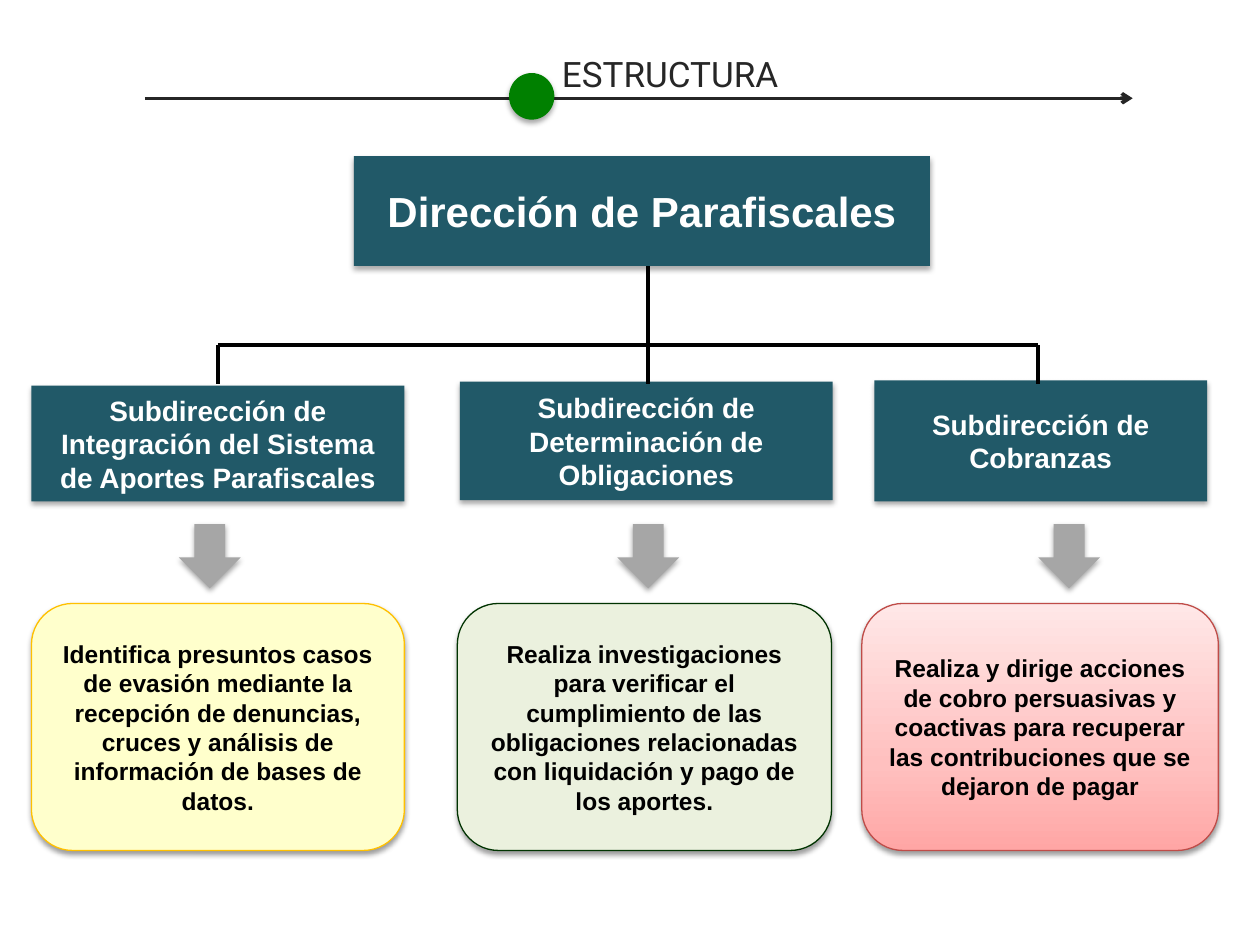
from dataclasses import dataclass
from lxml.etree import SubElement
from pptx import Presentation
from pptx.dml.color import RGBColor
from pptx.enum.shapes import MSO_CONNECTOR as Line, MSO_SHAPE as Shape
from pptx.enum.text import MSO_ANCHOR as Anchor, MSO_AUTO_SIZE as Auto, PP_ALIGN as Align
from pptx.oxml.ns import qn
from pptx.util import Inches, Pt


@dataclass(frozen=True)
class Theme:
    box: str = "215968"
    marker: str = "008000"
    arrow: str = "A6A6A6"
    ink: str = "262626"
    black: str = "000000"
    white: str = "FFFFFF"
    font: str = "Arial"
    title_font: str = "Roboto"
    title: int = 20
    head: int = 24
    unit: int = 16
    body: int = 14
    border: float = 0.75
    axis: float = 2
    link: float = 2.25


class Deck:
    COLS, ROWS = 100, 75

    def __init__(self, theme):
        self.theme = theme
        self.prs = Presentation()
        self.prs.slide_width, self.prs.slide_height = Inches(10), Inches(7.5)
        self.s = self.prs.slides.add_slide(self.prs.slide_layouts[5])

    def x(self, cols):
        return round(self.prs.slide_width * cols / self.COLS)

    def y(self, rows):
        return round(self.prs.slide_height * rows / self.ROWS)

    def area(self, left, top, width, height):
        return self.x(left), self.y(top), self.x(width), self.y(height)

    def text(self, tf, text, size, color, font, bold=False, align=Align.CENTER, anchor=Anchor.MIDDLE):
        frame = {"word_wrap": True, "auto_size": Auto.NONE, "vertical_anchor": anchor}
        for name, value in frame.items():
            setattr(tf, name, value)
        p = tf.paragraphs[0]
        p.alignment = align
        r = p.add_run()
        r.text = text
        for name, value in {"size": Pt(size), "name": font, "bold": bold}.items():
            setattr(r.font, name, value)
        r.font.color.rgb = RGBColor.from_string(color)

    def title(self, area, text):
        t = self.theme
        sp = self.s.shapes.title
        for name, value in zip(("left", "top", "width", "height"), self.area(*area)):
            setattr(sp, name, value)
        self.text(sp.text_frame, text, t.title, t.ink, t.title_font, align=Align.LEFT, anchor=Anchor.TOP)

    def gradient(self, sp, stops):
        sp.fill.gradient()
        sp.fill.gradient_angle = 90
        gs_list = sp._element.spPr.find(qn("a:gradFill")).find(qn("a:gsLst"))
        for gs in list(gs_list):
            gs_list.remove(gs)
        for pos, color in stops:
            gs = SubElement(gs_list, qn("a:gs"), pos=str(pos * 1000))
            SubElement(gs, qn("a:srgbClr"), val=color)

    def shadow(self, sp, alpha, dist):
        sp.shadow.inherit = False
        effects = sp._element.spPr.find(qn("a:effectLst"))
        outer = SubElement(effects, qn("a:outerShdw"), blurRad=str(Pt(3.1)), dist=str(Pt(dist)),
                           dir="5400000", rotWithShape="0")
        color = SubElement(outer, qn("a:srgbClr"), val=self.theme.black)
        SubElement(color, qn("a:alpha"), val=str(alpha * 1000))

    def shape(self, kind, area, fill, line=None):
        sp = self.s.shapes.add_shape(kind, *self.area(*area))
        if isinstance(fill, str):
            sp.fill.solid()
            sp.fill.fore_color.rgb = RGBColor.from_string(fill)
        else:
            self.gradient(sp, fill)
        if line:
            sp.line.color.rgb = RGBColor.from_string(line)
            sp.line.width = Pt(self.theme.border)
            self.shadow(sp, 38, 1.6)
        else:
            sp.line.fill.background()
            self.shadow(sp, 35, 1.8)
        return sp

    def box(self, area, text, size):
        t = self.theme
        sp = self.shape(Shape.RECTANGLE, area, t.box)
        self.text(sp.text_frame, text, size, t.white, t.font, bold=True)

    def card(self, area, text, fill, line):
        t = self.theme
        sp = self.shape(Shape.ROUNDED_RECTANGLE, area, fill, line)
        self.text(sp.text_frame, text, t.body, t.black, t.font, bold=True)

    def line(self, x1, y1, x2, y2, color, width, arrow=False):
        c = self.s.shapes.add_connector(Line.STRAIGHT, self.x(x1), self.y(y1), self.x(x2), self.y(y2))
        c.line.color.rgb = RGBColor.from_string(color)
        c.line.width = Pt(width)
        sp_pr = c._element.spPr
        if arrow:
            SubElement(sp_pr.find(qn("a:ln")), qn("a:tailEnd"), type="arrow")
        SubElement(sp_pr, qn("a:effectLst"))


UNITS = [
    {"box": (2.5, 30.6, 29.6, 9.2), "card": (2.5, 29.6), "stem": 17.3, "arrow": 14.2,
     "name": "Subdirección de Integración del Sistema de Aportes Parafiscales",
     "task": "Identifica presuntos casos de evasión mediante la recepción de denuncias, "
             "cruces y análisis de información de bases de datos.",
     "fill": "FFFFCC", "line": "FFC000"},
    {"box": (36.5, 30.3, 29.6, 9.4), "card": (36.3, 29.7), "stem": 51.4, "arrow": 49,
     "name": "Subdirección de Determinación de Obligaciones",
     "task": "Realiza investigaciones para verificar el cumplimiento de las obligaciones "
             "relacionadas con liquidación y pago de los aportes.",
     "fill": "EBF1DE", "line": "003300"},
    {"box": (69.4, 30.2, 26.4, 9.6), "card": (68.4, 28.3), "stem": 82.4, "arrow": 82.4,
     "name": "Subdirección de Cobranzas",
     "task": "Realiza y dirige acciones de cobro persuasivas y coactivas para recuperar "
             "las contribuciones que se dejaron de pagar",
     "fill": [(0, "FFA6A5"), (35, "FFC0BF"), (100, "FFE7E7")], "line": "BF4C48"},
]
HEAD_BOTTOM, BUS, STEM_END = 21.1, 27.4, 30.5
ARROW_TOP, CARD_TOP, CARD_HEIGHT = 41.6, 47.9, 19.6


def main():
    t = Theme()
    deck = Deck(t)
    deck.title((43.6, 3.7, 35.7, 4.3), "ESTRUCTURA")
    deck.line(11.5, 7.8, 89.9, 7.8, t.ink, t.axis, arrow=True)
    deck.shape(Shape.OVAL, (40.4, 5.8, 3.6, 3.7), t.marker)

    stems = [unit["stem"] for unit in UNITS]
    deck.line(stems[1], HEAD_BOTTOM, stems[1], BUS, t.black, t.link)
    deck.line(stems[0], BUS, stems[-1], BUS, t.black, t.link)
    deck.box((28.1, 12.4, 45.7, 8.7), "Dirección de Parafiscales", t.head)

    for unit in UNITS:
        stem = unit["stem"]
        left, width = unit["card"]
        deck.box(unit["box"], unit["name"], t.unit)
        deck.line(stem, BUS, stem, STEM_END, t.black, t.link)
        deck.card((left, CARD_TOP, width, CARD_HEIGHT), unit["task"], unit["fill"], unit["line"])
        deck.shape(Shape.DOWN_ARROW, (unit["arrow"], ARROW_TOP, 4.9, 5.1), t.arrow)

    deck.prs.save("out.pptx")


if __name__ == "__main__":
    main()
